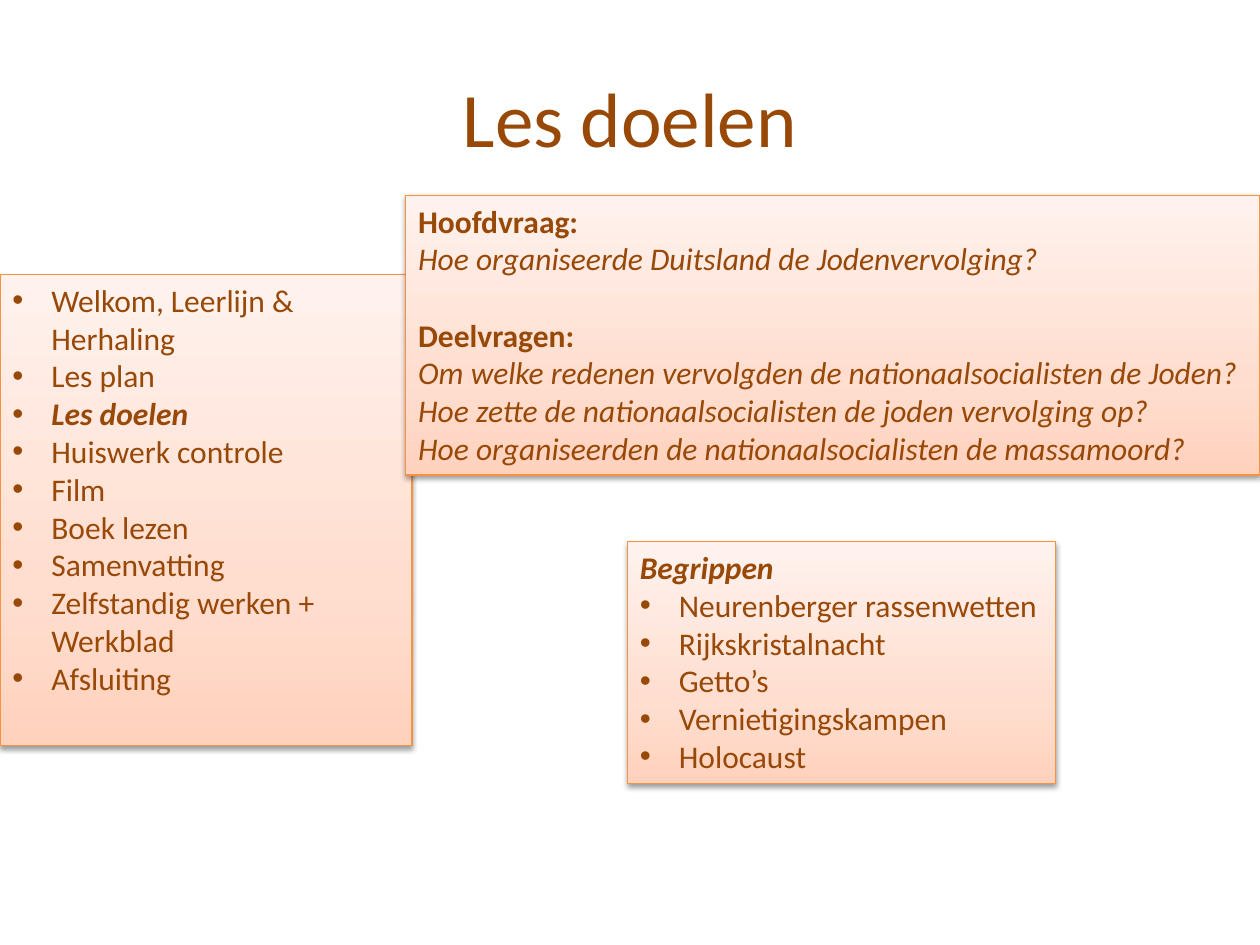
from dataclasses import dataclass

from lxml import etree
from pptx import Presentation
from pptx.dml.color import RGBColor
from pptx.enum.shapes import MSO_SHAPE
from pptx.enum.text import MSO_ANCHOR, PP_ALIGN
from pptx.oxml.ns import qn
from pptx.util import Inches, Pt

RECTANGLE = MSO_SHAPE.RECTANGLE
TOP, MIDDLE = MSO_ANCHOR.TOP, MSO_ANCHOR.MIDDLE
LEFT, CENTER = PP_ALIGN.LEFT, PP_ALIGN.CENTER


@dataclass(frozen=True)
class Theme:
    """Colours, type sizes and effects shared by the whole slide."""
    font: str = "Calibri"
    ink: RGBColor = RGBColor(0x98, 0x48, 0x07)
    border: RGBColor = RGBColor(0xF6, 0x92, 0x40)
    gradient: tuple = ((0, "FFD2BD"), (35, "FFDED0"), (100, "FFF2ED"))
    title_size: Pt = Pt(44)
    body_size: Pt = Pt(18)
    section_gap: Pt = Pt(22)
    border_width: Pt = Pt(0.75)
    shadow_blur: Pt = Pt(3.1)
    shadow_distance: Pt = Pt(1.6)
    bullet_indent: Inches = Inches(0.31)


THEME = Theme()

AGENDA = [
    "Welkom, Leerlijn & Herhaling", "Les plan", "Les doelen",
    "Huiswerk controle", "Film", "Boek lezen", "Samenvatting",
    "Zelfstandig werken + Werkblad", "Afsluiting",
]
CURRENT_STEP = "Les doelen"
CONCEPTS = [
    "Neurenberger rassenwetten", "Rijkskristalnacht", "Getto’s",
    "Vernietigingskampen", "Holocaust",
]
QUESTIONS = {
    "Hoofdvraag:": ["Hoe organiseerde Duitsland de Jodenvervolging?"],
    "Deelvragen:": [
        "Om welke redenen vervolgden de nationaalsocialisten de Joden?",
        "Hoe zette de nationaalsocialisten de joden vervolging op?",
        "Hoe organiseerden de nationaalsocialisten de massamoord?",
    ],
}


def add_child(parent, tag, **attributes):
    """Append a DrawingML element with the given attributes."""
    values = {name: str(value) for name, value in attributes.items()}
    return etree.SubElement(parent, qn(tag), values)


def add_line(frame, text, size=THEME.body_size, bold=False, italic=False,
             bullet=False, align=LEFT, space_before=None):
    """Write one paragraph into the frame, using its empty first one if free."""
    first = frame.paragraphs[0]
    paragraph = frame.add_paragraph() if first.runs else first
    paragraph.alignment = align
    if space_before:
        paragraph.space_before = space_before
    if bullet:
        properties = paragraph._p.get_or_add_pPr()
        properties.set("marL", str(THEME.bullet_indent))
        properties.set("indent", str(-THEME.bullet_indent))
        add_child(properties, "a:buFont", typeface="Arial")
        add_child(properties, "a:buChar", char="•")
    run = paragraph.add_run()
    run.text = text
    font = run.font
    font.name, font.size = THEME.font, size
    font.bold, font.italic = bold, italic
    font.color.rgb = THEME.ink


def add_panel(slide, box):
    """Add a shaded panel with border and shadow, and return its text frame."""
    panel = slide.shapes.add_shape(RECTANGLE, *box)
    panel.fill.gradient()
    panel.fill.gradient_angle = 90
    panel.line.color.rgb = THEME.border
    panel.line.width = THEME.border_width
    panel.shadow.inherit = False
    properties = panel._element.spPr
    stops = properties.find(".//" + qn("a:gsLst"))
    stops.clear()
    for position, color in THEME.gradient:
        stop = add_child(stops, "a:gs", pos=position * 1000)
        add_child(stop, "a:srgbClr", val=color)
    shadow = add_child(properties.find(qn("a:effectLst")), "a:outerShdw",
                       blurRad=THEME.shadow_blur, dist=THEME.shadow_distance,
                       dir=90 * 60000, rotWithShape=0)
    shade = add_child(shadow, "a:srgbClr", val="000000")
    add_child(shade, "a:alpha", val=38000)
    frame = panel.text_frame
    frame.word_wrap = True
    frame.vertical_anchor = TOP
    return frame


def add_title(slide, box, text):
    """Place the centred slide title."""
    frame = slide.shapes.add_textbox(*box).text_frame
    frame.word_wrap = True
    frame.vertical_anchor = MIDDLE
    add_line(frame, text, size=THEME.title_size, align=CENTER)


def add_agenda(slide, box):
    """Place the lesson agenda with the current step emphasised."""
    frame = add_panel(slide, box)
    for step in AGENDA:
        current = step == CURRENT_STEP
        add_line(frame, step, bold=current, italic=current, bullet=True)


def add_concepts(slide, box):
    """Place the list of key concepts under its heading."""
    frame = add_panel(slide, box)
    add_line(frame, "Begrippen", bold=True, italic=True)
    for concept in CONCEPTS:
        add_line(frame, concept, bullet=True)


def add_questions(slide, box):
    """Place the main question and the sub-questions."""
    frame = add_panel(slide, box)
    for number, (heading, questions) in enumerate(QUESTIONS.items()):
        gap = THEME.section_gap if number else None
        add_line(frame, heading, bold=True, space_before=gap)
        for question in questions:
            add_line(frame, question, italic=True)


def main():
    """Build and save the lesson goals slide."""
    deck = Presentation()
    deck.slide_width, deck.slide_height = Inches(10), Inches(7.5)
    slide = deck.slides.add_slide(deck.slide_layouts[6])
    add_title(slide, (Inches(0.5), Inches(0.3), Inches(9), Inches(1.25)),
              "Les doelen")
    add_agenda(slide, (Inches(0), Inches(2.18), Inches(3.27), Inches(3.74)))
    add_concepts(slide, (Inches(4.98), Inches(4.3), Inches(3.4), Inches(1.92)))
    add_questions(slide, (Inches(3.22), Inches(1.55), Inches(6.78), Inches(2.22)))
    deck.save("out.pptx")


if __name__ == "__main__":
    main()
